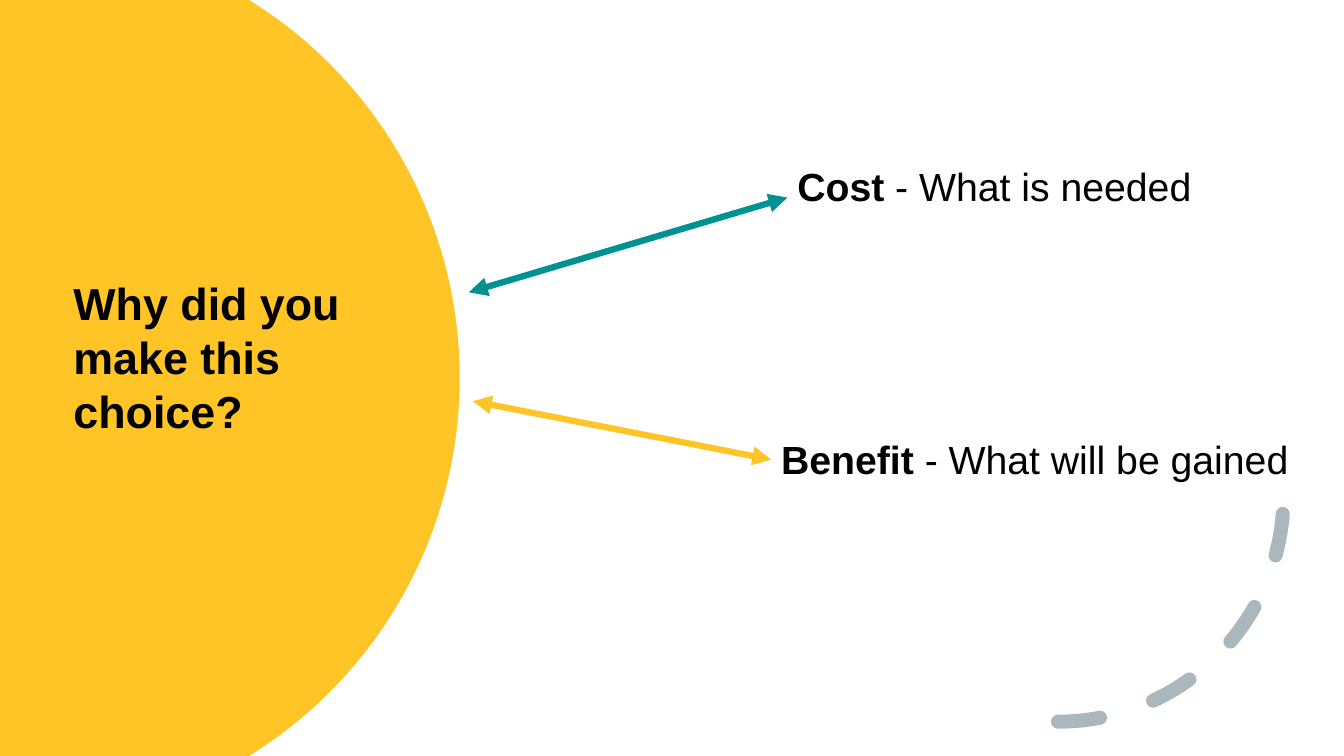
from dataclasses import dataclass
from math import asin, cos, sin

from lxml.etree import SubElement
from pptx import Presentation
from pptx.dml.color import RGBColor
from pptx.enum.dml import MSO_LINE
from pptx.enum.shapes import MSO_CONNECTOR, MSO_SHAPE
from pptx.enum.text import MSO_AUTO_SIZE
from pptx.oxml.ns import qn
from pptx.util import Inches, Pt


@dataclass(frozen=True)
class Theme:
    font: str = "Arial"
    text: str = "000000"
    gold: str = "FFC425"
    teal: str = "009293"
    grey: str = "AAB7BC"
    question_size: int = 32
    label_size: int = 28
    arrow_width: float = 4.5
    arc_width: int = 10


def add_run(p, text, font, size, color, bold=False):
    r = p.add_run()
    r.text = text
    r.font.name = font
    r.font.size = Pt(size)
    r.font.bold = bold
    r.font.color.rgb = RGBColor.from_string(color)


class SlideBuilder:
    def __init__(self, slide, theme):
        self.shapes = slide.shapes
        self.theme = theme

    def circle_part(self, cx, radius, height, color, steps=120):
        """Draw the part of a vertically centred circle that lies on the slide."""
        cy = height / 2
        limit = asin(cy / radius)
        angles = [limit * (2 * i / steps - 1) for i in range(steps + 1)]
        rim = [(Inches(cx + radius * cos(a)), Inches(cy + radius * sin(a))) for a in angles]
        fb = self.shapes.build_freeform(0, 0)
        fb.add_line_segments(rim + [(0, Inches(height))], close=True)
        sp = fb.convert_to_shape()
        sp.shadow.inherit = False
        sp.fill.solid()
        sp.fill.fore_color.rgb = RGBColor.from_string(color)
        sp.line.fill.background()

    def dashed_arc(self, left, top, size, color):
        """Draw the lower right quarter of a circle with round dashes."""
        sp = self.shapes.add_shape(
            MSO_SHAPE.ARC, Inches(left), Inches(top), Inches(size), Inches(size))
        sp.shadow.inherit = False
        sp.fill.background()
        sp.line.color.rgb = RGBColor.from_string(color)
        sp.line.width = Pt(self.theme.arc_width)
        sp.line.dash_style = MSO_LINE.DASH
        sp.line._get_or_add_ln().set("cap", "rnd")
        sp._element.spPr.get_or_add_xfrm().set("flipV", "1")

    def double_arrow(self, start, end, color):
        cn = self.shapes.add_connector(
            MSO_CONNECTOR.STRAIGHT, *(Inches(v) for v in (*start, *end)))
        cn.line.color.rgb = RGBColor.from_string(color)
        cn.line.width = Pt(self.theme.arrow_width)
        ln = cn.line._get_or_add_ln()
        for tag in ("a:headEnd", "a:tailEnd"):
            SubElement(ln, qn(tag)).set("type", "triangle")
        SubElement(cn._element.spPr, qn("a:effectLst"))

    def text(self, left, top, width, height, size, bold, plain=""):
        """Add a text box with a bold part followed by a plain part."""
        box = self.shapes.add_textbox(
            Inches(left), Inches(top), Inches(width), Inches(height))
        tf = box.text_frame
        tf.word_wrap = True
        tf.auto_size = MSO_AUTO_SIZE.SHAPE_TO_FIT_TEXT
        p = tf.paragraphs[0]
        style = {"font": self.theme.font, "size": size, "color": self.theme.text}
        add_run(p, bold, bold=True, **style)
        if plain:
            add_run(p, plain, **style)


def main():
    prs = Presentation()
    prs.slide_width = Inches(13.33)
    prs.slide_height = Inches(7.5)
    theme = Theme()
    s = SlideBuilder(prs.slides.add_slide(prs.slide_layouts[6]), theme)

    s.circle_part(0.15, 4.41, 7.5, theme.gold)
    s.dashed_arc(8.26, 2.69, 4.47, theme.grey)
    s.text(0.63, 2.69, 3.7, 1.72, theme.question_size, "Why did you make this choice?")
    s.double_arrow((4.65, 2.9), (7.81, 1.96), theme.teal)
    s.double_arrow((4.69, 3.98), (7.65, 4.56), theme.gold)
    s.text(7.81, 1.56, 4.21, 0.57, theme.label_size, "Cost ", "- What is needed")
    s.text(7.65, 4.27, 5.4, 0.57, theme.label_size, "Benefit", " - What will be gained")

    prs.save("out.pptx")


if __name__ == "__main__":
    main()
